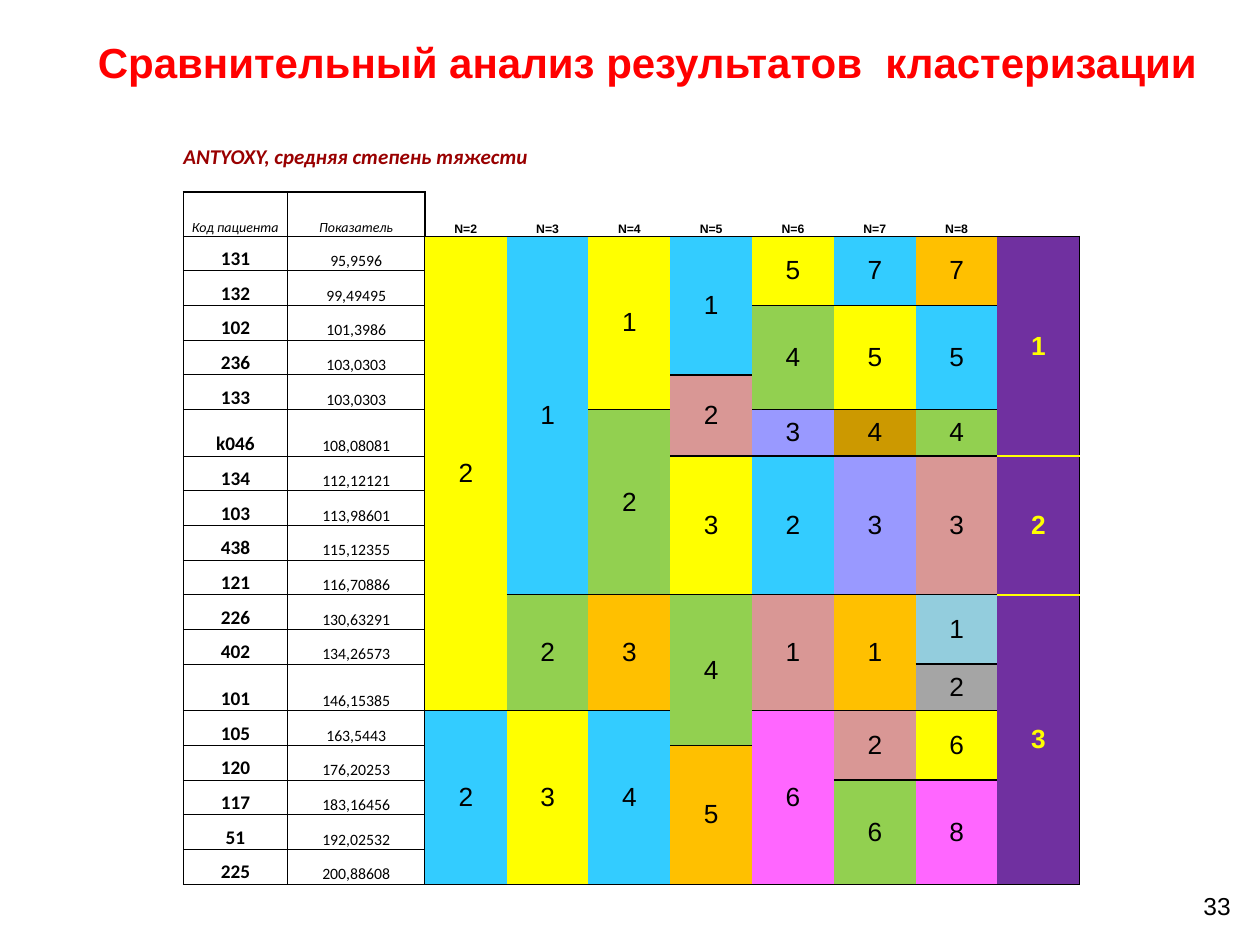
from lxml import etree
from pptx import Presentation
from pptx.dml import color
from pptx.enum import text
from pptx.oxml import ns
from pptx.util import Pt

BLACK, RED, MAROON, YELLOW = "000000", "FF0000", "990000", "FFFF00"
BLUE, GREEN, ORANGE, ROSE = "33CCFF", "92D050", "FFC000", "D99795"
LILAC, OCHRE, PINK, PURPLE = "9999FF", "CC9900", "FF66FF", "7030A0"
TEAL, GRAY = "93CDDD", "A5A5A5"
NO_GRID_STYLE = "{2D5ABB26-0587-4C30-8999-92F81FD0307C}"

PATIENTS = [
    ("131", "95,9596"), ("132", "99,49495"), ("102", "101,3986"),
    ("236", "103,0303"), ("133", "103,0303"), ("k046", "108,08081"),
    ("134", "112,12121"), ("103", "113,98601"), ("438", "115,12355"),
    ("121", "116,70886"), ("226", "130,63291"), ("402", "134,26573"),
    ("101", "146,15385"), ("105", "163,5443"), ("120", "176,20253"),
    ("117", "183,16456"), ("51", "192,02532"), ("225", "200,88608"),
]
# Each cluster: number of patients, label, fill
CLUSTERS = {
    "N=2": [(13, "2", YELLOW), (5, "2", BLUE)],
    "N=3": [(10, "1", BLUE), (3, "2", GREEN), (5, "3", YELLOW)],
    "N=4": [(5, "1", YELLOW), (5, "2", GREEN), (3, "3", ORANGE), (5, "4", BLUE)],
    "N=5": [(4, "1", BLUE), (2, "2", ROSE), (4, "3", YELLOW), (4, "4", GREEN),
            (4, "5", ORANGE)],
    "N=6": [(2, "5", YELLOW), (3, "4", GREEN), (1, "3", LILAC), (4, "2", BLUE),
            (3, "1", ROSE), (5, "6", PINK)],
    "N=7": [(2, "7", BLUE), (3, "5", YELLOW), (1, "4", OCHRE), (4, "3", LILAC),
            (3, "1", ORANGE), (2, "2", ROSE), (3, "6", GREEN)],
    "N=8": [(2, "7", ORANGE), (3, "5", BLUE), (1, "4", GREEN), (4, "3", ROSE),
            (2, "1", TEAL), (1, "2", GRAY), (2, "6", YELLOW), (3, "8", PINK)],
    "": [(6, "1", PURPLE), (4, "2", PURPLE), (8, "3", PURPLE)],
}
CAPTION_ROW, HEADER_ROW, FIRST_ROW = 0, 2, 3
TALL_ROWS = (5, 12)


def rgb(value):
    return color.RGBColor.from_string(value)


def format_text(paragraph, size, font="Arial", fill=BLACK, bold=False,
                italic=False, align=text.PP_ALIGN.CENTER):
    paragraph.alignment = align
    for run in paragraph.runs:
        run.font.size, run.font.name = Pt(size), font
        run.font.bold, run.font.italic = bold, italic
        run.font.color.rgb = rgb(fill)


def add_label(slide, box, content, anchor, **style):
    frame = slide.shapes.add_textbox(*map(Pt, box)).text_frame
    frame.word_wrap = True
    frame.vertical_anchor = anchor
    frame.text = content
    format_text(frame.paragraphs[0], **style)


def set_borders(cell, **edges):
    """Draw edges given as L, R, T or B = (colour, width)."""
    properties = cell._tc.get_or_add_tcPr()
    present = [edge for edge in "LRTB" if edge in edges]
    for index, edge in enumerate(present):
        fill, width = edges[edge]
        line = etree.Element(ns.qn(f"a:ln{edge}"), w=str(Pt(width)))
        solid = etree.SubElement(line, ns.qn("a:solidFill"))
        etree.SubElement(solid, ns.qn("a:srgbClr"), val=fill)
        properties.insert(index, line)


def fill_cell(cell, content, anchor=text.MSO_ANCHOR.BOTTOM, **style):
    cell.text = content
    cell.vertical_anchor = anchor
    format_text(cell.text_frame.paragraphs[0], **style)


def clear_cell(cell):
    cell.margin_left = cell.margin_right = cell.margin_top = cell.margin_bottom = 0
    cell.fill.background()
    # A small end mark keeps empty rows low
    paragraph = cell.text_frame.paragraphs[0]._p
    for mark in paragraph.findall(ns.qn("a:endParaRPr")):
        paragraph.remove(mark)
    etree.SubElement(paragraph, ns.qn("a:endParaRPr"), sz="700")


def fill_patients(table):
    thin, medium = (BLACK, 0.5), (BLACK, 1)
    for column, content in enumerate(("Код пациента", "Показатель")):
        cell = table.cell(HEADER_ROW, column)
        fill_cell(cell, content, size=8, font="Calibri", italic=True)
        set_borders(cell, L=medium, R=medium, T=medium, B=thin)
    for row, patient in enumerate(PATIENTS, FIRST_ROW):
        for column, content in enumerate(patient):
            cell = table.cell(row, column)
            fill_cell(cell, content, size=(11, 9)[column], font="Calibri",
                      bold=column == 0)
            set_borders(cell, L=thin, R=thin, T=thin, B=thin)


def fill_clusters(table, column, heading, clusters):
    is_summary = not heading
    outer = (BLACK, 0.5)
    inner = (YELLOW, 1.5) if is_summary else (BLACK, 1)
    if heading:
        fill_cell(table.cell(HEADER_ROW, column), heading, size=7, bold=True)
    row = FIRST_ROW
    for count, label, fill in clusters:
        last = row + count - 1
        cell, bottom_cell = table.cell(row, column), table.cell(last, column)
        if count > 1:
            cell.merge(bottom_cell)
        fill_cell(cell, label, text.MSO_ANCHOR.MIDDLE, size=15, bold=is_summary,
                  fill=YELLOW if is_summary else BLACK)
        cell.fill.solid()
        cell.fill.fore_color.rgb = rgb(fill)
        edges = {"T": outer if row == FIRST_ROW else inner,
                 "B": outer if last == FIRST_ROW + len(PATIENTS) - 1 else inner}
        if is_summary:
            edges["R"] = outer
        set_borders(cell, **edges)
        if count > 1:
            set_borders(bottom_cell, B=edges["B"])
        row = last + 1


def add_cluster_table(slide, box):
    left, top, width, height = box
    row_heights = [31, 12.5, 25.3]
    tall = 26.6
    normal = (height - sum(row_heights) - tall * len(TALL_ROWS)) / (
        len(PATIENTS) - len(TALL_ROWS))
    row_heights += [tall if i in TALL_ROWS else normal for i in range(len(PATIENTS))]
    column_widths = [59.5, 78.5]
    cluster_width = (width - sum(column_widths)) / len(CLUSTERS)
    column_widths += [cluster_width] * len(CLUSTERS)

    table = slide.shapes.add_table(len(row_heights), len(column_widths),
                                   *map(Pt, box)).table
    table.first_row = table.horz_banding = False
    table._tbl.tblPr.find(ns.qn("a:tableStyleId")).text = NO_GRID_STYLE
    for row, size in zip(table.rows, row_heights):
        row.height = Pt(size)
    for column, size in zip(table.columns, column_widths):
        column.width = Pt(size)
    for cell in table.iter_cells():
        clear_cell(cell)

    # Caption across the whole table
    caption = table.cell(CAPTION_ROW, 0)
    caption.merge(table.cell(CAPTION_ROW, len(column_widths) - 1))
    fill_cell(caption, "ANTYOXY, средняя степень тяжести", size=12, font="Calibri",
              fill=MAROON, bold=True, italic=True, align=text.PP_ALIGN.LEFT)

    fill_patients(table)
    for column, (heading, clusters) in enumerate(CLUSTERS.items(), 2):
        fill_clusters(table, column, heading, clusters)


def main():
    presentation = Presentation()
    presentation.slide_width, presentation.slide_height = Pt(720), Pt(540)
    slide = presentation.slides.add_slide(presentation.slide_layouts[6])
    # Page number
    add_label(slide, (516, 505.5, 194.4, 24), "33", text.MSO_ANCHOR.TOP, size=14,
              align=text.PP_ALIGN.RIGHT)
    add_cluster_table(slide, (104.8, 66.2, 512, 439.2))
    # Title
    add_label(slide, (20, 16, 700, 39), "Сравнительный анализ результатов  кластеризации",
              text.MSO_ANCHOR.MIDDLE, size=24, fill=RED, bold=True)
    presentation.save("out.pptx")


if __name__ == "__main__":
    main()
